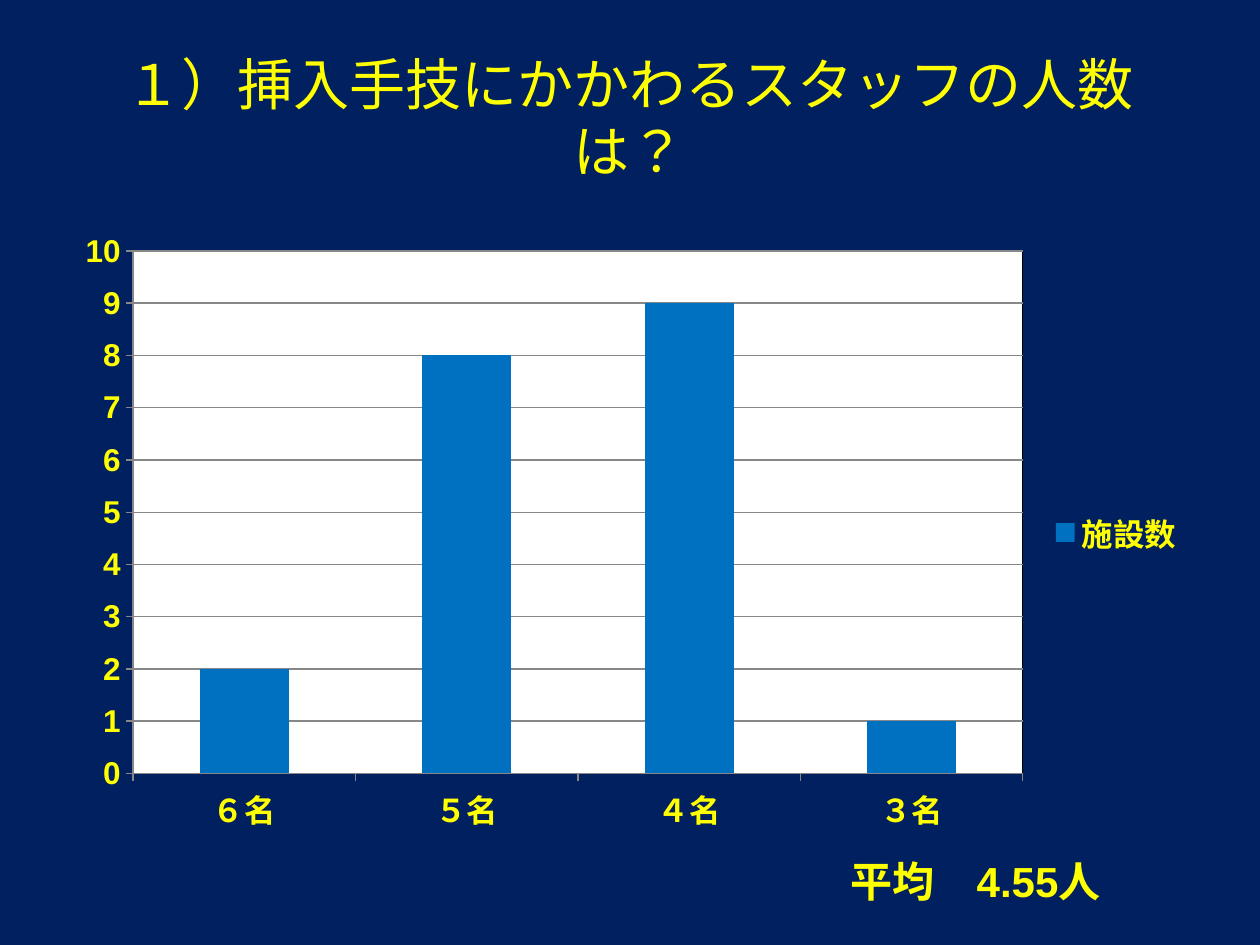
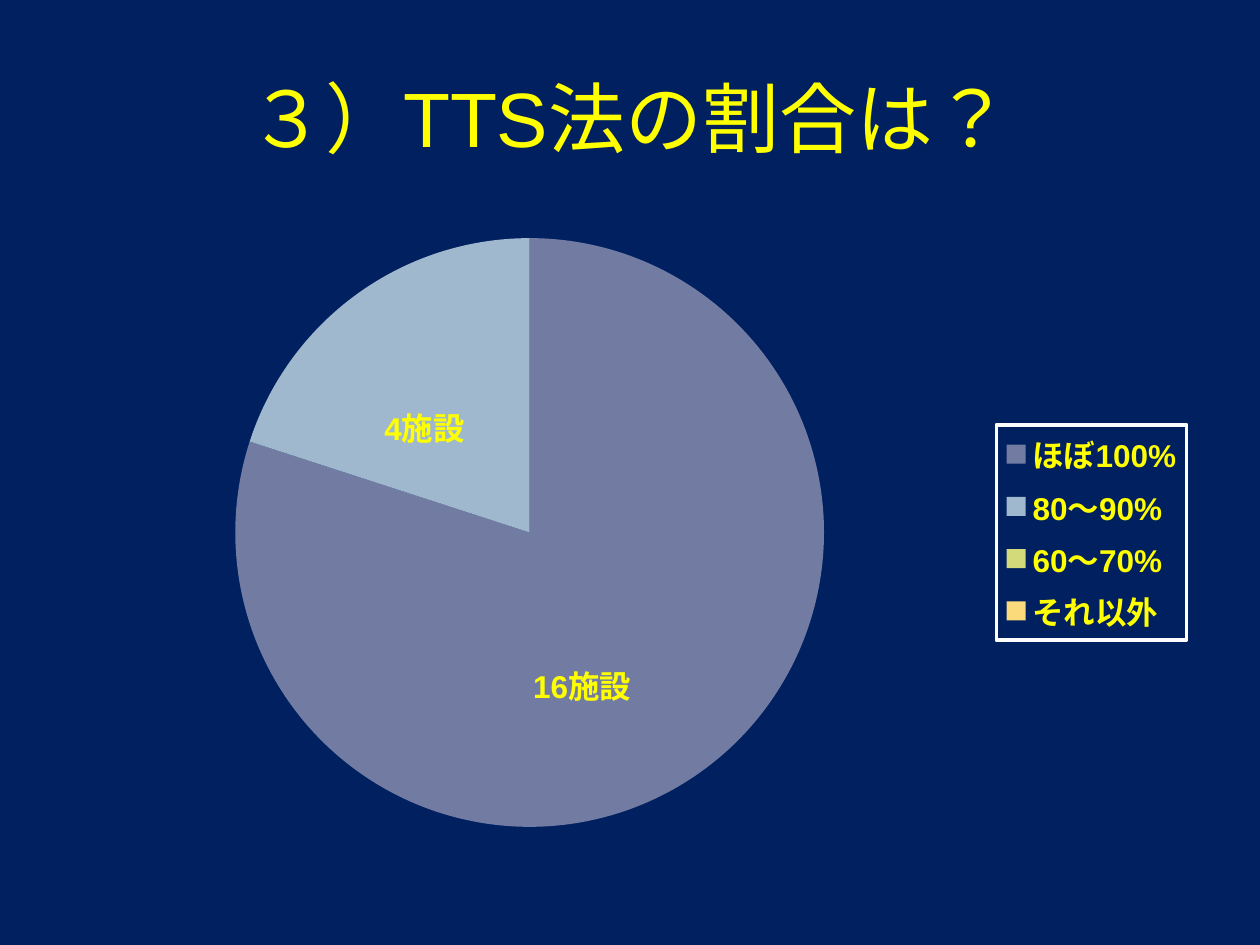
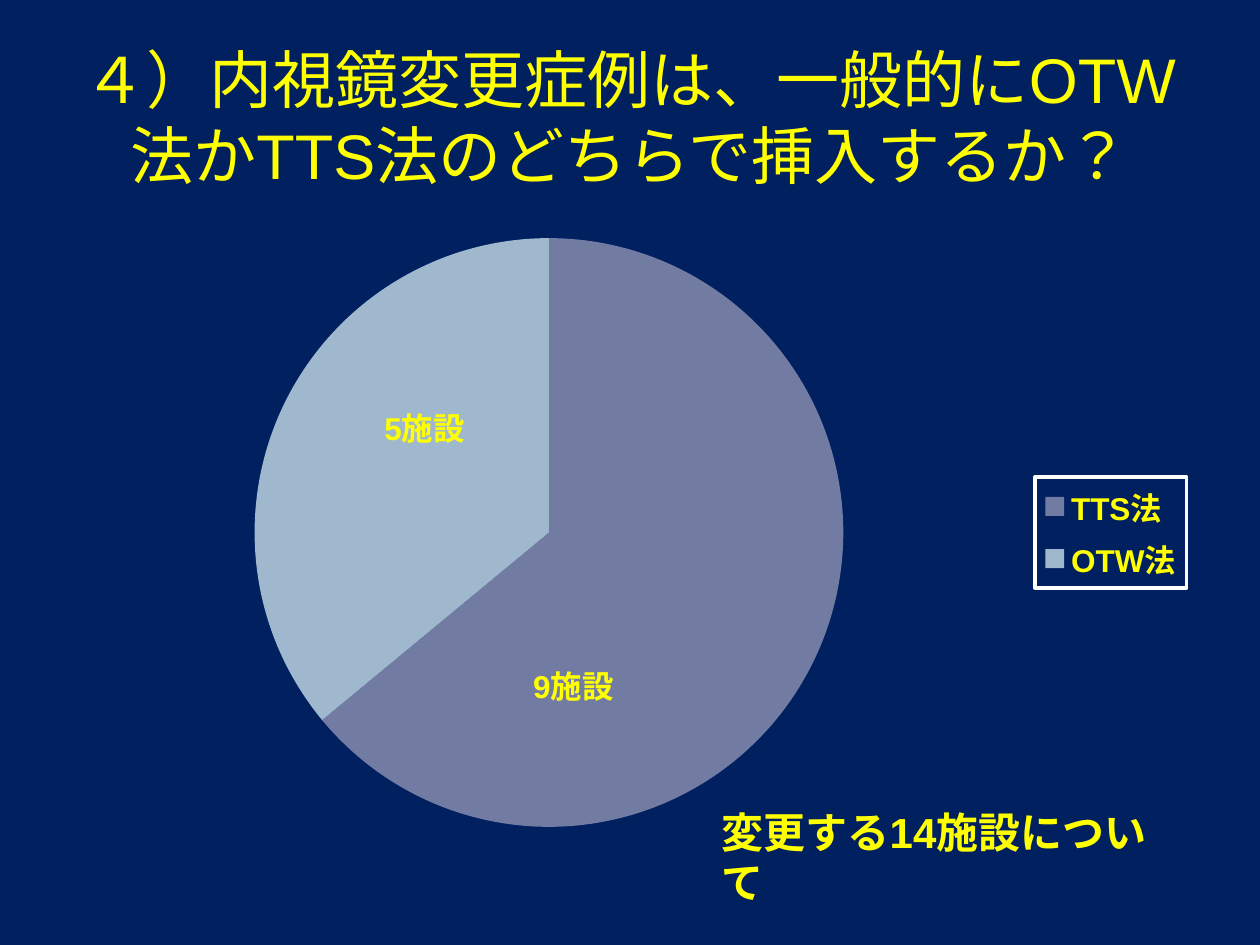
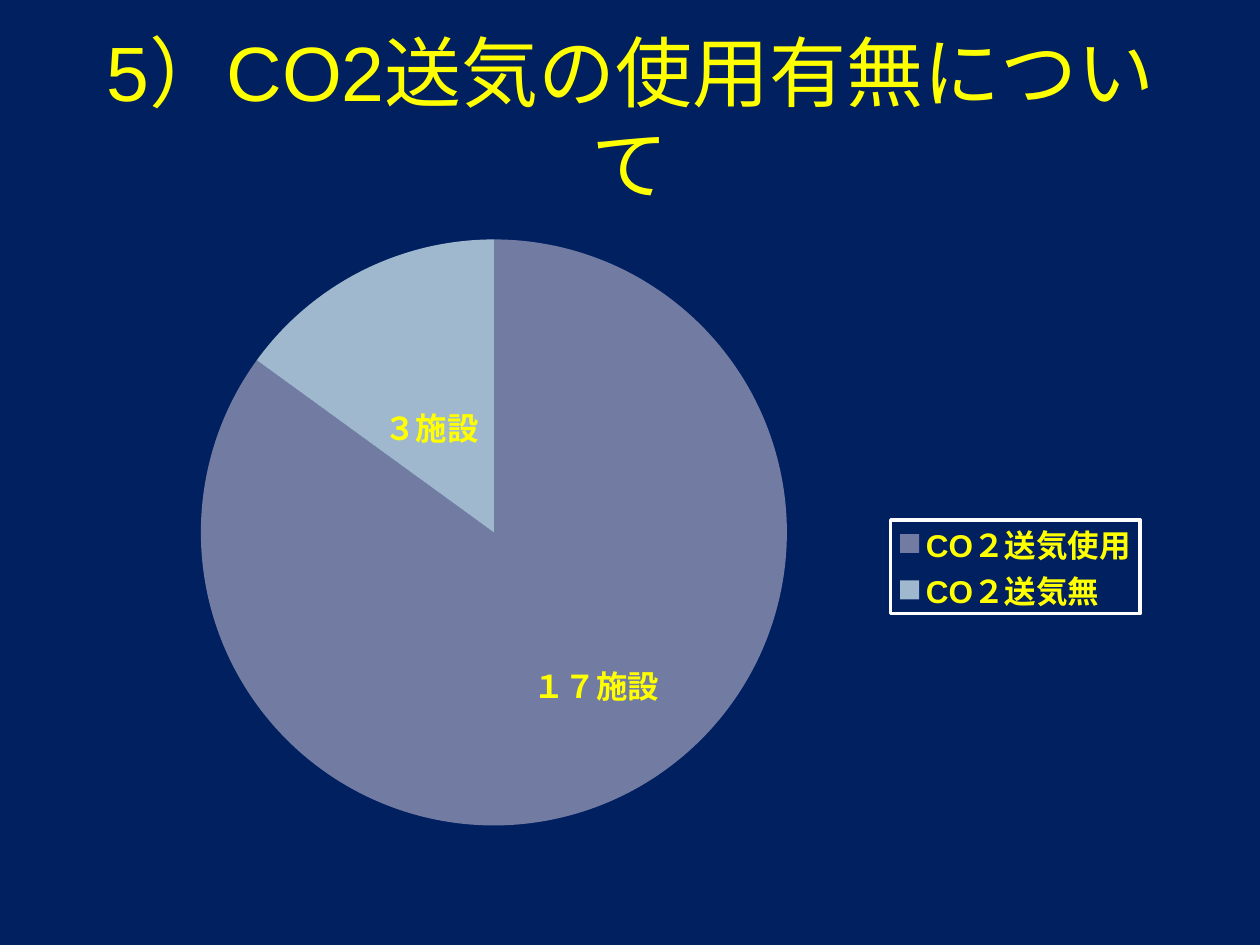
from dataclasses import dataclass
from typing import NamedTuple, Optional

from pptx import Presentation
from pptx.chart.chart import Chart
from pptx.chart.data import CategoryChartData
from pptx.dml.color import RGBColor
from pptx.enum.chart import XL_CHART_TYPE, XL_LEGEND_POSITION, XL_TICK_MARK
from pptx.enum.lang import MSO_LANGUAGE_ID
from pptx.enum.text import MSO_ANCHOR, MSO_AUTO_SIZE, PP_ALIGN
from pptx.oxml import parse_xml
from pptx.oxml.ns import nsdecls
from pptx.slide import Slide
from pptx.util import Cm, Pt

# Shared style
FONT = "Arial"
NAVY, YELLOW, WHITE, BLACK = "002060", "FFFF00", "FFFFFF", "000000"
BLUE, GRID = "0070C0", "878787"
PIE_COLORS = ["727CA3", "9FB8CD", "D2DA7A", "FADA7A"]
MARGIN, CONTENT_W = 1.27, 22.86


class Box(NamedTuple):
    """Left, top, width and height: cm on a slide, fractions in a chart."""
    x: float
    y: float
    w: float
    h: float


TITLE_BOX = Box(MARGIN, 0.76, CONTENT_W, 3.18)
CHART_BOX = Box(MARGIN, 4.45, CONTENT_W, 12.57)
FIRST_LABEL = Box(10.5, 13.32, 4.39, 1.02)
SECOND_LABEL = Box(7.5, 8.13, 4.39, 1.02)


@dataclass
class Label:
    text: str
    box: Box
    size: int = 18


@dataclass
class ChartSlide:
    title: str
    title_size: int
    series: str
    values: dict[str, int]
    labels: list[Label]
    is_pie: bool = True
    plot: Optional[Box] = None
    legend: Optional[Box] = None


SLIDES = [
    ChartSlide("１）挿入手技にかかわるスタッフの人数は？", 32, "施設数",
               {"６名": 2, "５名": 8, "４名": 9, "３名": 1},
               [Label("平均　4.55人", Box(16.9, 17.12, 7.19, 1.27), 24)],
               is_pie=False),
    ChartSlide("３）TTS法の割合は？", 44, "Series 1",
               {"ほぼ100%": 80, "80～90%": 20, "60～70%": 0, "それ以外": 0},
               [Label("16施設", FIRST_LABEL), Label("4施設", SECOND_LABEL)]),
    ChartSlide("４）内視鏡変更症例は、一般的にOTW法かTTS法のどちらで挿入するか？",
               36, "Series 1", {"TTS法": 64, "OTW法": 36},
               [Label("9施設", FIRST_LABEL), Label("5施設", SECOND_LABEL),
                Label("変更する14施設について", Box(14.3, 16.13, 9.8, 1.27), 24)]),
    ChartSlide("5）CO2送気の使用有無について", 44, "Series 1",
               {"CO２送気使用": 85, "CO２送気無": 15},
               [Label("１７施設", FIRST_LABEL), Label("３施設", SECOND_LABEL)],
               plot=Box(0.12, 0.03, 0.52, 0.94),
               legend=Box(0.73, 0.48, 0.22, 0.15)),
]


def rgb(color: str) -> RGBColor:
    return RGBColor.from_string(color)


def place(box: Box) -> list[Cm]:
    return [Cm(length) for length in box]


def style_font(font, size: int, bold: bool) -> None:
    font.name, font.size, font.bold = FONT, Pt(size), bold
    font.color.rgb = rgb(YELLOW)


def add_text(slide: Slide, text: str, box: Box, size: int, bold: bool = True):
    tf = slide.shapes.add_textbox(*place(box)).text_frame
    tf.word_wrap = True
    p = tf.paragraphs[0]
    r = p.add_run()
    r.text = text
    # Japanese keeps full-width punctuation at its full width
    r.font.language_id = MSO_LANGUAGE_ID.JAPANESE
    style_font(p.font, size, bold)
    return tf


def add_title(slide: Slide, text: str, size: int) -> None:
    tf = add_text(slide, text, TITLE_BOX, size, bold=False)
    tf.vertical_anchor = MSO_ANCHOR.MIDDLE
    tf.paragraphs[0].alignment = PP_ALIGN.CENTER


# Chart parts that need XML
def chart_sp_pr(fill: str = "", line: str = "", width: float = 2):
    def paint(color: str) -> str:
        if not color:
            return "<a:noFill/>"
        return f'<a:solidFill><a:srgbClr val="{color}"/></a:solidFill>'

    return parse_xml(f'<c:spPr {nsdecls("c", "a")}>{paint(fill)}'
                     f'<a:ln w="{Pt(width)}">{paint(line)}</a:ln></c:spPr>')


def set_layout(parent, index: int, box: Box, inner: bool = False) -> None:
    for old in parent.xpath("./c:layout"):
        parent.remove(old)
    target = '<c:layoutTarget val="inner"/>' if inner else ""
    modes = "".join(f'<c:{axis}Mode val="edge"/>' for axis in "xy")
    sizes = "".join(f'<c:{name} val="{value}"/>'
                    for name, value in box._asdict().items())
    parent.insert(index, parse_xml(
        f'<c:layout {nsdecls("c")}><c:manualLayout>{target}{modes}{sizes}'
        "</c:manualLayout></c:layout>"))


def style_columns(chart: Chart) -> None:
    plot = chart.plots[0]
    plot.gap_width = 150
    fill = plot.series[0].format.fill
    fill.solid()
    fill.fore_color.rgb = rgb(BLUE)
    value_axis = chart.value_axis
    value_axis.minimum_scale, value_axis.maximum_scale = 0, 10
    value_axis.major_unit = 1
    lines = [value_axis.major_gridlines.format.line]
    for axis in (chart.category_axis, value_axis):
        axis.major_tick_mark = XL_TICK_MARK.OUTSIDE
        lines.append(axis.format.line)
    for line in lines:
        line.color.rgb = rgb(GRID)
        line.width = Pt(0.75)


def style_pie(chart: Chart, count: int) -> None:
    series = chart.plots[0].series[0]
    for i, color in enumerate(PIE_COLORS[:count]):
        fill = series.points[i].format.fill
        fill.solid()
        fill.fore_color.rgb = rgb(color)


def add_chart(slide: Slide, item: ChartSlide) -> None:
    data = CategoryChartData()
    data.categories = list(item.values)
    data.add_series(item.series, list(item.values.values()))
    kind = XL_CHART_TYPE.PIE if item.is_pie else XL_CHART_TYPE.COLUMN_CLUSTERED
    chart = slide.shapes.add_chart(kind, *place(CHART_BOX), data).chart
    style_font(chart.font, 18, True)
    chart.has_title = False
    chart.has_legend = True
    chart.legend.position = XL_LEGEND_POSITION.RIGHT
    chart.legend.include_in_layout = False
    chart.plots[0].vary_by_categories = item.is_pie

    root = chart.element
    root.xpath("./c:chart")[0].addnext(chart_sp_pr())
    plot_area = root.xpath(".//c:plotArea")[0]
    if item.is_pie:
        style_pie(chart, len(item.values))
        root.xpath(".//c:legend/c:overlay")[0].addnext(chart_sp_pr(line=WHITE))
    else:
        style_columns(chart)
        plot_area.append(chart_sp_pr(fill=WHITE, line=BLACK, width=0.75))
    if item.plot:
        set_layout(plot_area, 0, item.plot, inner=True)
    if item.legend:
        set_layout(root.xpath(".//c:legend")[0], 1, item.legend)


def main() -> None:
    prs = Presentation()
    prs.slide_width, prs.slide_height = Cm(25.4), Cm(19.05)
    for item in SLIDES:
        slide = prs.slides.add_slide(prs.slide_layouts[6])
        slide.background.fill.solid()
        slide.background.fill.fore_color.rgb = rgb(NAVY)
        add_title(slide, item.title, item.title_size)
        add_chart(slide, item)
        for label in item.labels:
            tf = add_text(slide, label.text, label.box, label.size)
            tf.auto_size = MSO_AUTO_SIZE.SHAPE_TO_FIT_TEXT
    prs.save("out.pptx")


if __name__ == "__main__":
    main()
